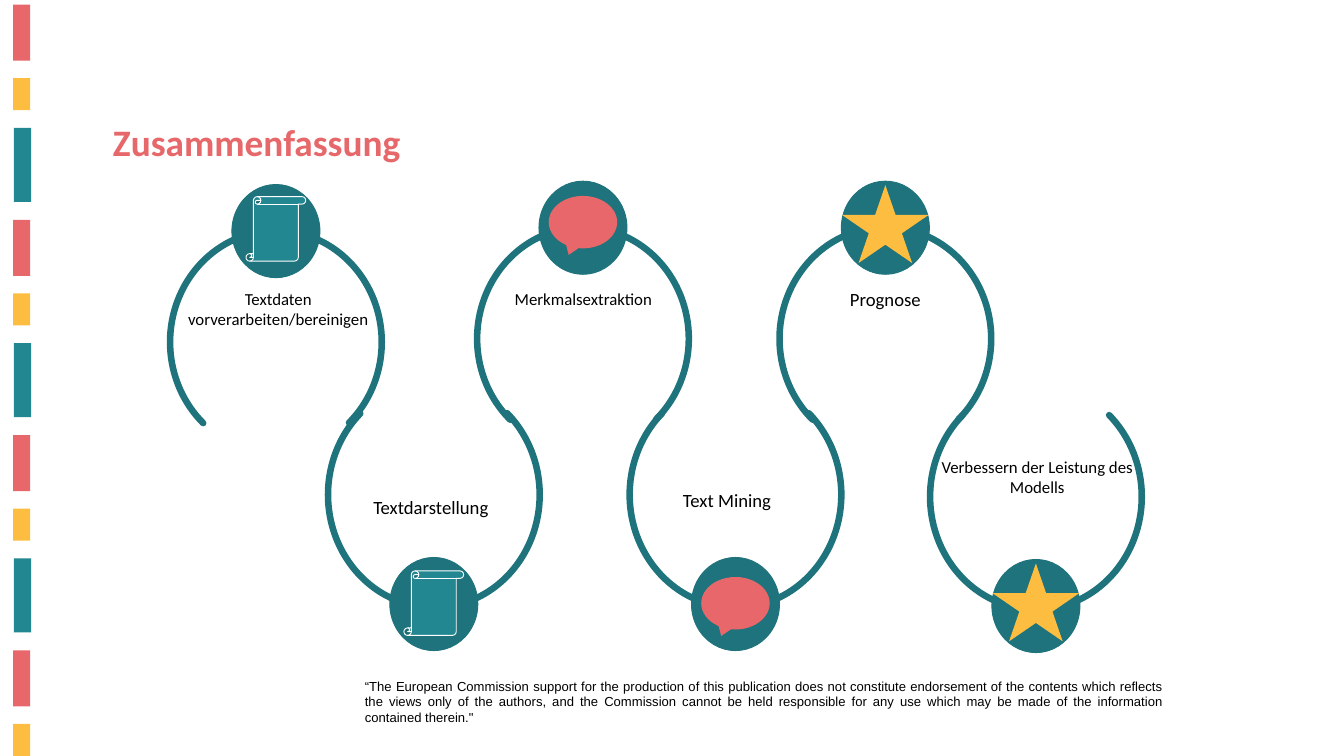
from pptx import Presentation
from pptx.dml.color import RGBColor
from pptx.enum.shapes import MSO_SHAPE
from pptx.enum.text import MSO_ANCHOR, MSO_AUTO_SIZE, PP_ALIGN
from pptx.util import Pt

ARC, DISC = MSO_SHAPE.ARC, MSO_SHAPE.OVAL
SCROLL, STAR = MSO_SHAPE.VERTICAL_SCROLL, MSO_SHAPE.STAR_5_POINT
BUBBLE = MSO_SHAPE.OVAL_CALLOUT
TOP, FIT = MSO_ANCHOR.TOP, MSO_AUTO_SIZE.SHAPE_TO_FIT_TEXT
LEFT, CENTER, JUSTIFY = PP_ALIGN.LEFT, PP_ALIGN.CENTER, PP_ALIGN.JUSTIFY

PAGE_WIDTH, PAGE_HEIGHT = 1440, 810
DARK_TEAL, TEAL, CORAL, YELLOW = "1E737C", "238791", "E8676A", "FDBD40"
ARC_WIDTH, DISC_WIDTH = 226.8, 94.3
TITLE_ONLY = 5

# Icon: preset, width, height, fill, outline
ICONS = {
    "scroll": (SCROLL, 64.1, 69.1, TEAL, "FFFFFF"),
    "bubble": (BUBBLE, 73.4, 56.2, CORAL, None),
    "star": (STAR, 92.9, 83.5, YELLOW, None),
}

# Step: text, size, arc left and top, opens downwards,
# label box relative to the arc, icon, icon distance below the disc top
STEPS = [
    ("Textdaten vorverarbeiten/bereinigen", 18, 182.2, 247, True,
     (11.5, 58.3, 208.8, 51.1), "scroll", 13),
    ("Textdarstellung", 20, 351.4, 409, False,
     (-0.7, 118.8, 221.8, 55.4), "scroll", 14.4),
    ("Merkmalsextraktion", 18, 511.2, 243.4, True,
     (2.9, 61.9, 221.8, 28.8), "bubble", 15.8),
    ("Text Mining", 20, 674.6, 409, False,
     (0, 111.6, 208.8, 55.4), "bubble", 20.9),
    ("Prognose", 20, 835.2, 243.4, True,
     (14.4, 61.9, 198, 31.7), "star", 4.3),
    ("Verbessern der Leistung des Modells", 18, 996.5, 411.1, False,
     (3.6, 74.9, 222.5, 51.1), "star", 4.3),
]


def color(value):
    return RGBColor.from_string(value)


def place(shape, left, top, width, height):
    shape.left, shape.top = Pt(left), Pt(top)
    shape.width, shape.height = Pt(width), Pt(height)


def add_shape(page, preset, box, fill=None, line=None, weight=1):
    shape = page.shapes.add_shape(preset, *(Pt(value) for value in box))
    shape.shadow.inherit = False
    if fill:
        shape.fill.solid()
        shape.fill.fore_color.rgb = color(fill)
    else:
        shape.fill.background()
    if line:
        shape.line.color.rgb = color(line)
        shape.line.width = Pt(weight)
    else:
        shape.line.fill.background()
    return shape


def set_text(shape, text, size, font="Calibri", align=CENTER,
             ink="000000", bold=False):
    frame = shape.text_frame
    frame.word_wrap = True
    frame.auto_size = FIT
    frame.vertical_anchor = TOP
    para = frame.paragraphs[0]
    para.text = text
    para.alignment = align
    para.font.name = font
    para.font.size = Pt(size)
    para.font.bold = bold
    para.font.color.rgb = color(ink)


def add_text(page, box, text, size, **style):
    shape = page.shapes.add_textbox(*(Pt(value) for value in box))
    set_text(shape, text, size, **style)


def add_side_stripes(page, left, first_top, period):
    # Stripe: shift to the right, distance from period start, height, fill
    pattern = [(0, 0, 60, CORAL), (0, 78.7, 34.4, YELLOW),
               (1, 132, 79.4, TEAL)]
    for repeat in range(4):
        for shift, offset, height, fill in pattern:
            top = first_top + repeat * period + offset
            if top < PAGE_HEIGHT:
                add_shape(page, MSO_SHAPE.RECTANGLE,
                          (left + shift, top, 18.4, height), fill)


def add_step(page, text, size, left, top, upper, label, icon, icon_drop):
    # Open loop with round ends
    arc_height = 239 if upper else 242
    arc = add_shape(page, ARC, (left, top, ARC_WIDTH, arc_height),
                    line=DARK_TEAL, weight=7)
    arc.adjustments[0], arc.adjustments[1] = 79.141, 28.684
    arc.rotation = 0 if upper else 180
    arc.line.fill.solid()
    arc.line.color.rgb = color(DARK_TEAL)
    arc.element.spPr.find("{*}ln").set("cap", "rnd")

    # Disc on the closed side
    disc_left = left + (ARC_WIDTH - DISC_WIDTH) / 2
    disc_top = top + (-49.3 if upper else 188.3)
    add_shape(page, DISC, (disc_left, disc_top, DISC_WIDTH, 99.8),
              DARK_TEAL, DARK_TEAL)

    # Icon centred on the disc
    preset, width, height, fill, line = ICONS[icon]
    icon_left = disc_left + (DISC_WIDTH - width) / 2
    add_shape(page, preset, (icon_left, disc_top + icon_drop, width, height),
              fill, line)

    # Label inside the loop
    dx, dy, width, height = label
    add_text(page, (left + dx, top + dy, width, height), text, size)


def main():
    deck = Presentation()
    deck.slide_width, deck.slide_height = Pt(PAGE_WIDTH), Pt(PAGE_HEIGHT)
    page = deck.slides.add_slide(deck.slide_layouts[TITLE_ONLY])

    add_side_stripes(page, 14, 5, 230.6)

    # Title
    title = page.shapes.title
    place(title, 113.8, 123.8, 473.8, 55.4)
    set_text(title, "Zusammenfassung", 40, align=LEFT, ink="E7686A", bold=True)

    # Chain of steps
    for step in STEPS:
        add_step(page, *step)

    # Disclaimer
    add_text(page, (383.8, 722.9, 869.8, 58.3),
             "“The European Commission support for the production of this "
             "publication does not constitute endorsement of the contents "
             "which reflects the views only of the authors, and the "
             "Commission cannot be held responsible for any use which may be "
             "made of the information contained therein.\"",
             14, font="Arial", align=JUSTIFY)

    deck.save("out.pptx")


if __name__ == "__main__":
    main()
